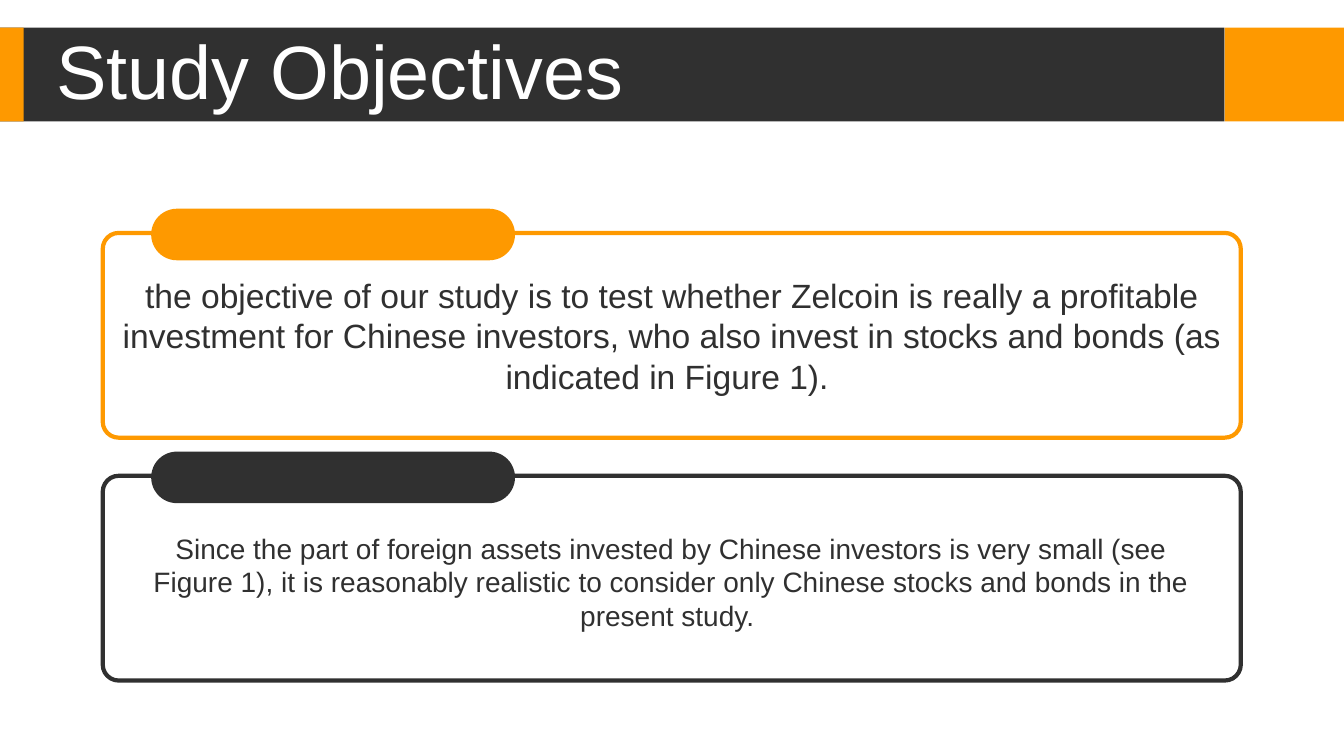
import pptx
import pptx.dml.color
import pptx.enum.shapes
import pptx.enum.text
import pptx.oxml.ns
import pptx.util
from lxml import etree

Cm = pptx.util.Cm
SHAPES = pptx.enum.shapes.MSO_SHAPE
ALIGN = pptx.enum.text.PP_ALIGN
MIDDLE = pptx.enum.text.MSO_ANCHOR.MIDDLE
ORANGE, DARK, WHITE = "FE9900", "303030", "FFFFFF"

deck = pptx.Presentation()
deck.slide_width, deck.slide_height = Cm(33.87), Cm(19.05)
page = deck.slides.add_slide(deck.slide_layouts[6])


def add_block(kind, left, top, width, height, color):
    """Add a filled shape without outline or shadow."""
    block = page.shapes.add_shape(kind, Cm(left), Cm(top), Cm(width), Cm(height))
    block.shadow.inherit = False
    block.fill.solid()
    block.fill.fore_color.rgb = pptx.dml.color.RGBColor.from_string(color)
    block.line.fill.background()
    return block


def write_text(box, text, size, color, align):
    box.text_frame.word_wrap = True
    para = box.text_frame.paragraphs[0]
    para.text = text
    para.alignment = align
    font = para.runs[0].font
    font.name, font.size = "Arial", pptx.util.Pt(size)
    font.color.rgb = pptx.dml.color.RGBColor.from_string(color)


# Title band
for left, width, color in [(30.86, 3.01, ORANGE), (0, 30.86, DARK), (0, 0.6, ORANGE)]:
    add_block(SHAPES.RECTANGLE, left, 0.7, width, 2.36, color)

title = page.shapes.add_textbox(Cm(1.17), Cm(0.88), Cm(24.64), Cm(2))
write_text(title, "Study Objectives", 54, WHITE, ALIGN.LEFT)
title.text_frame.vertical_anchor = MIDDLE
title.text_frame.paragraphs[0].line_spacing = 0.9

# Framed panels, each with a pill on its top edge
panels = []
for index, color in enumerate([ORANGE, DARK]):
    top = 5.87 + index * 6.12
    panel = add_block(SHAPES.ROUNDED_RECTANGLE, 2.59, top, 28.68, 5.16, WHITE)
    panel.adjustments[0] = 0.078
    panel.line.color.rgb = pptx.dml.color.RGBColor.from_string(color)
    panel.line.width = pptx.util.Pt(3)
    white = panel.element.spPr.find(".//" + pptx.oxml.ns.qn("a:srgbClr"))
    etree.SubElement(white, pptx.oxml.ns.qn("a:alpha"), val="50000")
    panels.append(panel)

    pill = add_block(SHAPES.ROUNDED_RECTANGLE, 3.81, top - 0.61, 9.17, 1.3, color)
    pill.adjustments[0] = 0.5

write_text(
    panels[0],
    "the objective of our study is to test whether Zelcoin is really a profitable "
    "investment for Chinese investors, who also invest in stocks and bonds "
    "(as indicated in Figure 1). ",
    24, DARK, ALIGN.CENTER,
)
panels[0].text_frame.vertical_anchor = MIDDLE

reason = page.shapes.add_textbox(Cm(3.3), Cm(13.26), Cm(27.23), Cm(2.82))
write_text(
    reason,
    "Since the part of foreign assets invested by Chinese investors is very small "
    "(see Figure 1), it is reasonably realistic to consider only Chinese stocks "
    "and bonds in the present study. ",
    20, DARK, ALIGN.CENTER,
)
reason.text_frame.auto_size = pptx.enum.text.MSO_AUTO_SIZE.SHAPE_TO_FIT_TEXT

deck.save("out.pptx")
